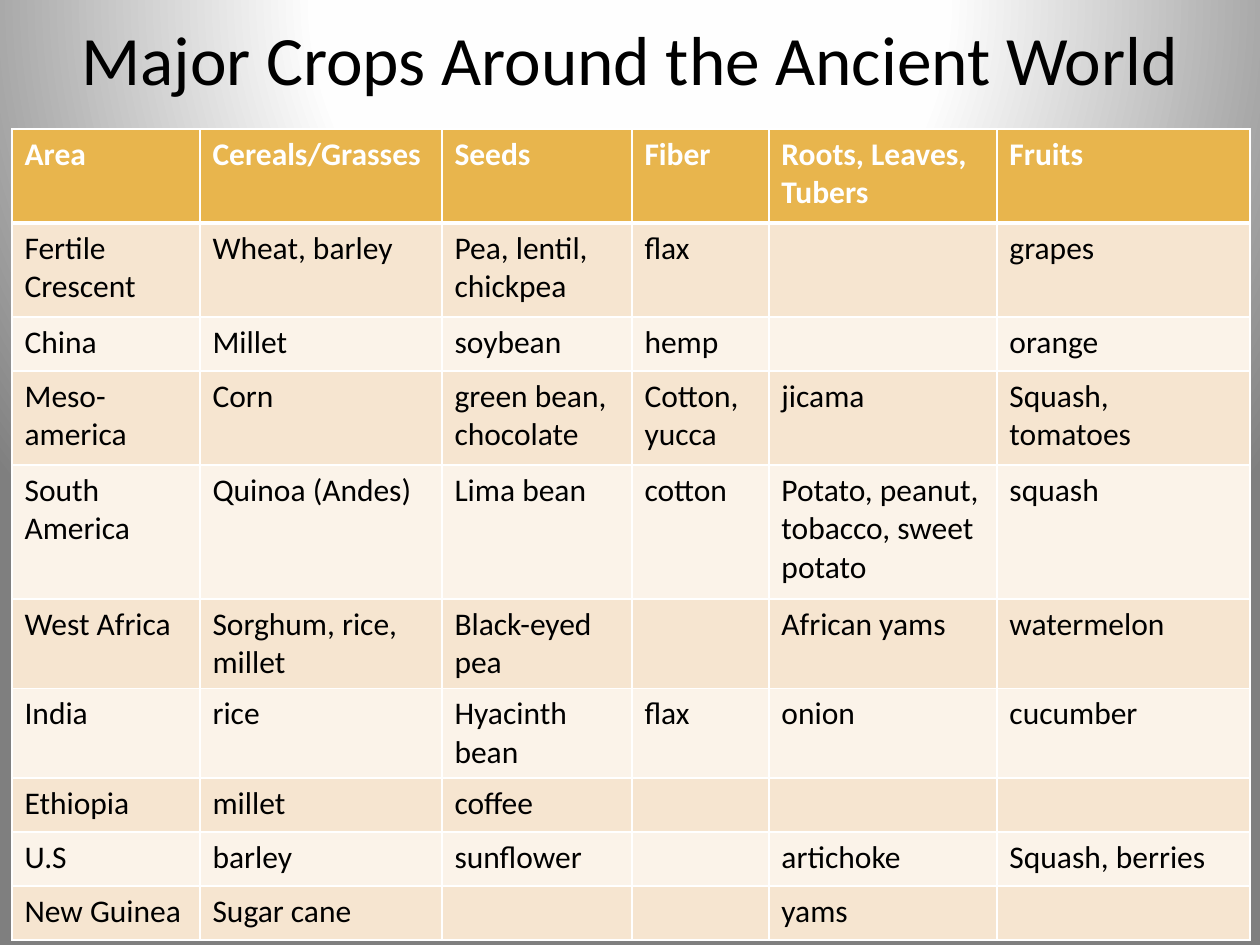
from pptx import Presentation
from pptx.dml.color import RGBColor
from pptx.enum.text import MSO_ANCHOR, MSO_AUTO_SIZE, PP_ALIGN
from pptx.oxml import parse_xml
from pptx.oxml.ns import nsdecls, qn
from pptx.util import Emu, Pt

PX_PER_INCH = 126
FONT = "Calibri"
WHITE, BLACK = "FFFFFF", "000000"
HEADER_FILL = "E8B54D"
BAND_FILLS = ["F6E5D0", "FBF3E9"]
BACKGROUND_STOPS = [(0, WHITE), (40, "FEFEFE"), (100, "7F7F7F")]
COLUMN_WIDTHS = [188, 242, 190, 137, 228, 253]
ROW_HEIGHTS = [94, 94, 54, 94, 134, 89, 89, 54, 54, 54]
CROPS = [
    ["Area", "Cereals/Grasses", "Seeds", "Fiber", "Roots, Leaves, Tubers", "Fruits"],
    ["Fertile Crescent", "Wheat, barley", "Pea, lentil, chickpea", "flax", "", "grapes"],
    ["China", "Millet", "soybean", "hemp", "", "orange"],
    ["Meso-america", "Corn", "green bean, chocolate", "Cotton, yucca", "jicama", "Squash,\ntomatoes"],
    ["South America", "Quinoa (Andes)", "Lima bean", "cotton",
     "Potato, peanut, tobacco, sweet potato", "squash"],
    ["West Africa", "Sorghum, rice, millet", "Black-eyed pea", "", "African yams", "watermelon"],
    ["India", "rice", "Hyacinth bean", "flax", "onion", "cucumber"],
    ["Ethiopia", "millet", "coffee", "", "", ""],
    ["U.S", "barley", "sunflower", "", "artichoke", "Squash, berries"],
    ["New Guinea", "Sugar cane", "", "", "yams", ""],
]


def px(length):
    return Emu(round(length * 914400 / PX_PER_INCH))


def color(value):
    return RGBColor.from_string(value)


def write_text(frame, text, size=18, fill=BLACK, bold=False, align=PP_ALIGN.LEFT):
    frame.text = text
    for paragraph in frame.paragraphs:
        paragraph.alignment = align
        font = paragraph.font
        for target in [font] + [run.font for run in paragraph.runs]:
            target.name = FONT
            target.size = Pt(size)
            target.bold = bold
            target.color.rgb = color(fill)


def set_background(slide):
    stops = "".join(
        f'<a:gs pos="{position * 1000}"><a:srgbClr val="{shade}"/></a:gs>'
        for position, shade in BACKGROUND_STOPS
    )
    background = parse_xml(
        f'<p:bg {nsdecls("p", "a")}><p:bgPr><a:gradFill rotWithShape="1">'
        f'<a:gsLst>{stops}</a:gsLst><a:path path="circle">'
        '<a:fillToRect l="50000" t="-80000" r="50000" b="180000"/></a:path>'
        '</a:gradFill><a:effectLst/></p:bgPr></p:bg>'
    )
    slide.element.find(qn("p:cSld")).insert(0, background)


def add_title(slide, text):
    title = slide.shapes.title
    title.left, title.top, title.width, title.height = px(63), px(-21), px(1134), px(157)
    frame = title.text_frame
    frame.word_wrap = True
    frame.auto_size = MSO_AUTO_SIZE.NONE
    frame.vertical_anchor = MSO_ANCHOR.MIDDLE
    write_text(frame, text, size=39.6, align=PP_ALIGN.CENTER)


def set_borders(cell, top, bottom):
    properties = cell._tc.get_or_add_tcPr()
    for side, width in [("L", 1), ("R", 1), ("T", top), ("B", bottom)]:
        properties.append(parse_xml(
            f'<a:ln{side} {nsdecls("a")} w="{Pt(width)}"><a:solidFill>'
            f'<a:srgbClr val="{WHITE}"/></a:solidFill></a:ln{side}>'
        ))


def format_cell(cell, text, row):
    is_header = row == 0
    write_text(cell.text_frame, text, fill=WHITE if is_header else BLACK, bold=is_header)
    set_borders(cell, top=3 if row == 1 else 1, bottom=3 if is_header else 1)
    cell.fill.solid()
    cell.fill.fore_color.rgb = color(HEADER_FILL if is_header else BAND_FILLS[(row - 1) % 2])


def add_crop_table(slide):
    table = slide.shapes.add_table(
        len(CROPS), len(COLUMN_WIDTHS), px(12), px(129),
        px(sum(COLUMN_WIDTHS)), px(sum(ROW_HEIGHTS)),
    ).table
    for column, width in zip(table.columns, COLUMN_WIDTHS):
        column.width = px(width)
    for row, height in enumerate(ROW_HEIGHTS):
        table.rows[row].height = px(height)
        for column, text in enumerate(CROPS[row]):
            format_cell(table.cell(row, column), text, row)


def main():
    presentation = Presentation()
    presentation.slide_width, presentation.slide_height = px(1260), px(945)
    slide = presentation.slides.add_slide(presentation.slide_layouts[5])
    set_background(slide)
    add_title(slide, "Major Crops Around the Ancient World")
    add_crop_table(slide)
    presentation.save("out.pptx")


if __name__ == "__main__":
    main()
